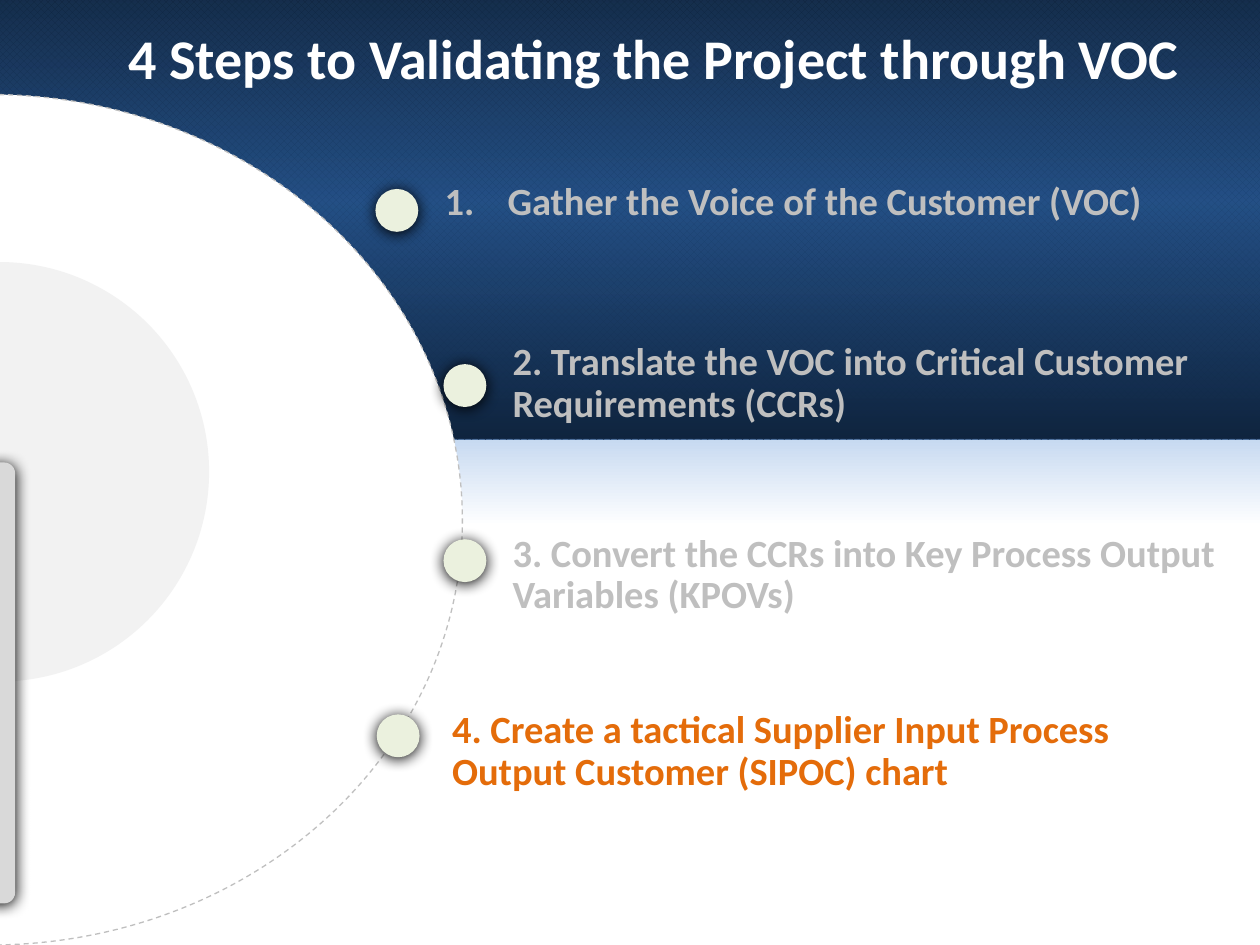
import pptx
import pptx.util
import pptx.dml.color
import pptx.enum.dml
import pptx.enum.shapes
import pptx.enum.text
import pptx.oxml
import pptx.oxml.ns
from lxml import etree

Inches = pptx.util.Inches
Pt = pptx.util.Pt
Color = pptx.dml.color.RGBColor.from_string
Kind = pptx.enum.shapes.MSO_SHAPE
Anchor = pptx.enum.text.MSO_ANCHOR
qn = pptx.oxml.ns.qn

theme = {
    "font": "Calibri", "title": 32, "body": 22,
    "navy": "0F243E", "blue": "1F497D", "sky": "558ED5", "pale": "8EB4E3",
    "white": "FFFFFF", "gray": "BFBFBF", "orange": "E46C0A",
    "dot": "EBF1DE", "disc": "F2F2F2", "tab": "D9D9D9", "black": "000000",
}

deck = pptx.Presentation()
deck.slide_width = Inches(10)
deck.slide_height = Inches(7.5)
slide = deck.slides.add_slide(deck.slide_layouts[6])


def draw(kind, box, color=None, stops=(), glow=False):
    shape = slide.shapes.add_shape(kind, *map(Inches, box))
    shape.shadow.inherit = False
    shape.line.fill.background()
    props = shape._element.spPr
    if color:
        shape.fill.solid()
        shape.fill.fore_color.rgb = Color(theme[color])
    if stops:
        shape.fill.background()
        grad = etree.Element(qn("a:gradFill"), rotWithShape="1")
        group = etree.SubElement(grad, qn("a:gsLst"))
        for pos, name, alpha in stops:
            stop = etree.SubElement(group, qn("a:gs"), pos=str(pos * 1000))
            tint = etree.SubElement(stop, qn("a:srgbClr"), val=theme[name])
            if alpha < 100:
                etree.SubElement(tint, qn("a:alpha"), val=str(alpha * 1000))
        etree.SubElement(grad, qn("a:lin"), ang="5400000", scaled="0")
        props.replace(props.find(qn("a:noFill")), grad)
    if glow:
        shade = etree.SubElement(
            props.find(qn("a:effectLst")), qn("a:outerShdw"),
            blurRad=str(Pt(8.5)), dist=str(Pt(1)), dir="5400000",
            algn="ctr", rotWithShape="0")
        etree.SubElement(shade, qn("a:srgbClr"), val=theme["black"])
    return shape


def write(box, text, size, color, anchor=Anchor.TOP, space=None):
    label = slide.shapes.add_textbox(*map(Inches, box))
    frame = label.text_frame
    frame.word_wrap = True
    frame.auto_size = pptx.enum.text.MSO_AUTO_SIZE.SHAPE_TO_FIT_TEXT
    frame.vertical_anchor = anchor
    para = frame.paragraphs[0]
    para.text = text
    para.line_spacing = space
    para.font.name = theme["font"]
    para.font.size = Pt(theme[size])
    para.font.bold = True
    para.font.color.rgb = Color(theme[color])
    return para


draw(Kind.RECTANGLE, (-0.01, 2.83, 10.03, 4.63),
     stops=[(0, "pale", 100), (29, "white", 100), (100, "white", 100)])

band = (-0.03, -0.01, 10.04, 3.5)
mesh = draw(Kind.RECTANGLE, band)
mesh.fill.patterned()
mesh.fill.pattern = pptx.enum.dml.MSO_PATTERN.OUTLINED_DIAMOND
mesh.fill.fore_color.rgb = Color(theme["navy"])
mesh.fill.back_color.rgb = Color(theme["sky"])
draw(Kind.RECTANGLE, band,
     stops=[(0, "navy", 90), (46, "blue", 90), (100, "navy", 100)])

ring = draw(Kind.ARC, (-3.83, 0.75, 7.5, 6.75), "white")
ring.line.color.rgb = Color(theme["gray"])
ring.line.width = Pt(0.75)
ring.line.dash_style = pptx.enum.dml.MSO_LINE.DASH

steps = [
    ((3.43, 1.4, 6.32, 0.43), "Gather the Voice of the Customer (VOC)", "gray"),
    ((3.97, 2.67, 6.2, 0.77),
     "2. Translate the VOC into Critical Customer Requirements (CCRs)", "gray"),
    ((3.97, 4.19, 5.87, 0.77),
     "3. Convert the CCRs into Key Process Output Variables (KPOVs)", "gray"),
    ((3.49, 5.59, 6.26, 0.77),
     "4. Create a tactical Supplier Input Process Output Customer (SIPOC) chart",
     "orange"),
]
paras = [write(box, text, "body", color, space=0.9) for box, text, color in steps]

first = paras[0]._p.get_or_add_pPr()
first.set("marL", str(Inches(0.5)))
first.set("indent", str(-Inches(0.5)))
first.insert(1, etree.Element(qn("a:buFont"), typeface="+mj-lt"))
first.insert(2, etree.Element(qn("a:buAutoNum"), type="arabicPeriod"))

for row, left in enumerate([2.98, 3.52, 3.52, 2.99]):
    draw(Kind.OVAL, (left, 1.5 + row * 1.39, 0.34, 0.34), "dot", glow=True)

disc = draw(Kind.ARC, (-1.67, 2.08, 3.33, 3.33), "disc")
for arc, end in ((ring, 53.71), (disc, 53.6)):
    arc.adjustments[0] = 162
    arc.adjustments[1] = end

tab = draw(Kind.ROUNDED_RECTANGLE, (-0.13, 3.67, 0.25, 3.5), "tab", glow=True)
tab.adjustments[0] = 0.35
tab.rotation = 180

write((0.92, 0.13, 8.67, 0.64), "4 Steps to Validating the Project through VOC",
      "title", "white", Anchor.BOTTOM)

deck.save("out.pptx")
